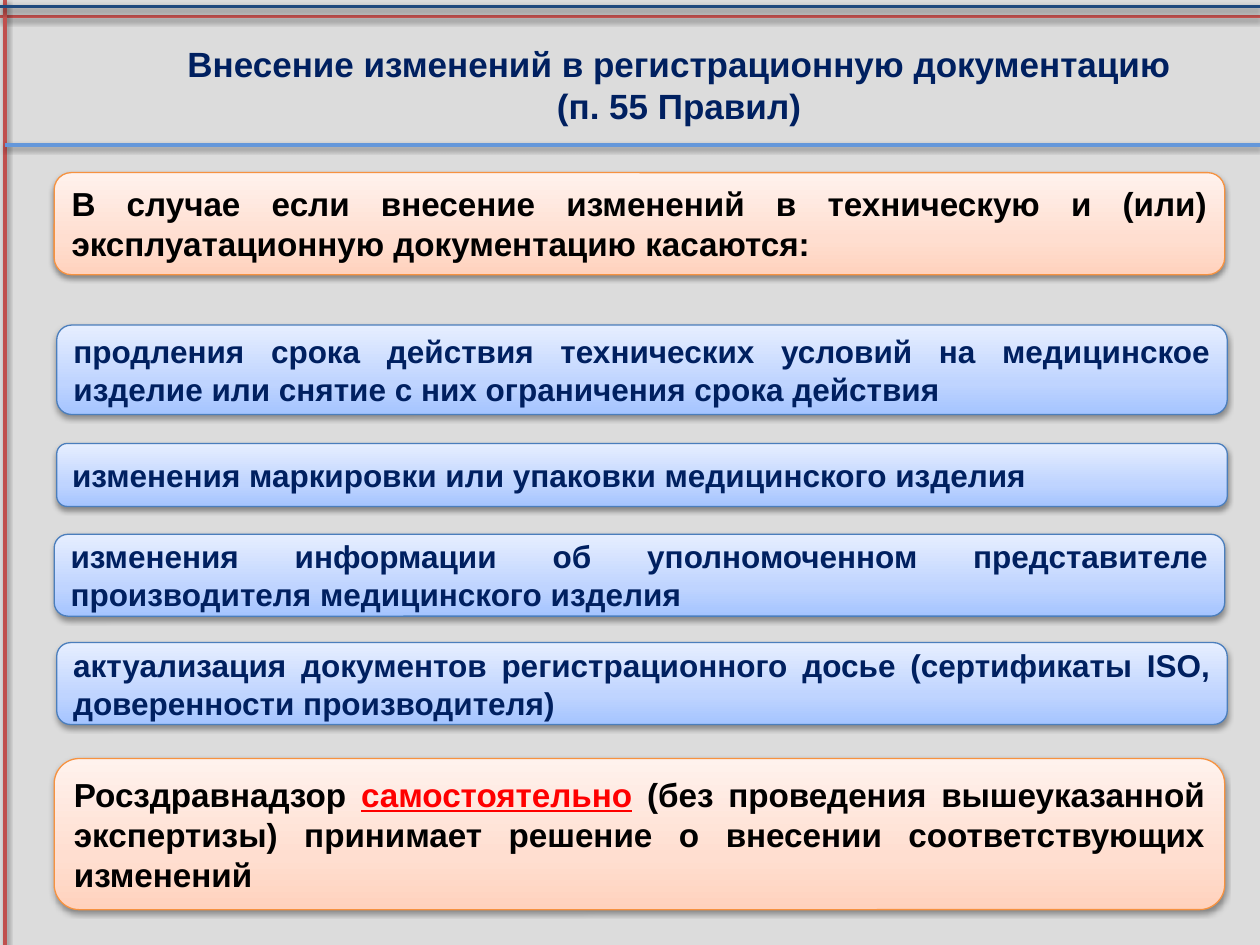
"""Build the slide on changes to medical device registration documents."""
from copy import deepcopy

from lxml import etree
from pptx import Presentation
from pptx import util as u
from pptx.dml.color import RGBColor
from pptx.enum import shapes, text
from pptx.oxml.ns import qn

COLUMNS, ROWS = 100, 75
CELL = u.Inches(0.1)
COLORS = {
    "background": "DCDCDC", "red": "C0504D", "navy": "1F497D", "sky": "6497DA",
    "ink": "002060", "black": "000000", "accent": "FF0000",
}
STYLES = {
    "orange": {"line": "F69240", "stops": ["FFD2BD", "FFDED0", "FFF2ED"],
               "size": 19, "color": "black"},
    "blue": {"line": "4B7EBC", "stops": ["A4C4FF", "BFD4FF", "E6EEFF"],
             "size": 18, "color": "ink"},
}
STOP_POSITIONS = [0, 0.35, 1]
RULES = [
    (COLUMNS, 1.3, 0, 1.3, "red"),
    (0.4, 0, 0.4, ROWS, "red"),
    (0, 0.5, COLUMNS, 0.5, "navy"),
    (0.4, 11.5, COLUMNS, 11.5, "sky"),
]
PANEL_WIDTH = 92.9
PANELS = [
    ("orange", 4.3, 13.7, 8.1,
     ["В случае если внесение изменений в техническую и (или) эксплуатационную документацию касаются:"]),
    ("blue", 4.5, 25.8, 7.1,
     ["продления срока действия технических условий на медицинское изделие или снятие с них ограничения срока действия"]),
    ("blue", 4.5, 35.2, 5,
     ["изменения маркировки или упаковки медицинского изделия"]),
    ("blue", 4.3, 42.4, 6.5,
     ["изменения информации об уполномоченном представителе производителя медицинского изделия"]),
    ("blue", 4.5, 51, 6.5,
     ["актуализация документов регистрационного досье (сертификаты ISO, доверенности производителя)"]),
    ("orange", 4.3, 60.2, 12,
     ["Росздравнадзор ", ("самостоятельно", {"color": "accent", "underline": True}),
      " (без проведения вышеуказанной экспертизы) принимает решение о внесении соответствующих изменений"]),
]


def grid(*cells):
    """Convert grid columns and rows to slide lengths."""
    return [round(cell * CELL) for cell in cells]


def rgb(value):
    """Turn a hex string into a colour."""
    return RGBColor.from_string(value)


def add_shadow(shape):
    """Give a shape or connector the soft shadow below it."""
    effects = etree.SubElement(shape._element.spPr, qn("a:effectLst"))
    shadow = etree.SubElement(effects, qn("a:outerShdw"), blurRad="40000",
                              dist="20000", dir="5400000", rotWithShape="0")
    color = etree.SubElement(shadow, qn("a:srgbClr"), val=COLORS["black"])
    etree.SubElement(color, qn("a:alpha"), val="38000")


def add_text(paragraph, content, size=18, color="ink", underline=None,
             align=text.PP_ALIGN.JUSTIFY):
    """Append one bold run to a paragraph."""
    paragraph.alignment = align
    run = paragraph.add_run()
    run.text = content
    font = run.font
    font.name, font.size, font.bold = "Arial", u.Pt(size), True
    font.underline = underline
    font.color.rgb = rgb(COLORS[color])


def add_rule(slide, left, top, right, bottom, color):
    """Draw a shadowed straight line."""
    rule = slide.shapes.add_connector(shapes.MSO_CONNECTOR.STRAIGHT,
                                      *grid(left, top, right, bottom))
    rule.line.color.rgb = rgb(COLORS[color])
    rule.line.width = u.Pt(2)
    add_shadow(rule)


def fill_gradient(shape, colors):
    """Fill a shape with a three-stop gradient rising from the bottom."""
    shape.fill.gradient()
    shape.fill.gradient_angle = 90
    stop_list = shape._element.spPr.find(f".//{qn('a:gsLst')}")
    stop_list.append(deepcopy(stop_list[0]))
    for stop, color, position in zip(shape.fill.gradient_stops, colors, STOP_POSITIONS):
        stop.color.rgb = rgb(color)
        stop.position = position


def add_panel(slide, style_name, left, top, height, runs):
    """Draw a rounded panel holding one justified paragraph."""
    style = STYLES[style_name]
    panel = slide.shapes.add_shape(shapes.MSO_SHAPE.ROUNDED_RECTANGLE,
                                   *grid(left, top, PANEL_WIDTH, height))
    fill_gradient(panel, style["stops"])
    panel.line.color.rgb = rgb(style["line"])
    panel.line.width = u.Pt(0.75)
    add_shadow(panel)
    frame = panel.text_frame
    frame.word_wrap = True
    frame.vertical_anchor = text.MSO_ANCHOR.MIDDLE
    for run in runs:
        content, extra = (run, {}) if isinstance(run, str) else run
        add_text(frame.paragraphs[0], content,
                 **{"size": style["size"], "color": style["color"], **extra})


def set_title(slide, lines):
    """Place the title placeholder and write its lines."""
    title = slide.shapes.title
    title.left, title.top, title.width, title.height = grid(7.8, 1.6, 92.2, 10.2)
    frame = title.text_frame
    frame.auto_size = text.MSO_AUTO_SIZE.NONE
    frame.vertical_anchor = text.MSO_ANCHOR.MIDDLE
    for index, line in enumerate(lines):
        paragraph = frame.add_paragraph() if index else frame.paragraphs[0]
        add_text(paragraph, line, size=20, align=text.PP_ALIGN.CENTER)


def main():
    """Assemble and save the slide."""
    presentation = Presentation()
    presentation.slide_width, presentation.slide_height = grid(COLUMNS, ROWS)
    slide = presentation.slides.add_slide(presentation.slide_layouts.get_by_name("Title Only"))
    slide.background.fill.solid()
    slide.background.fill.fore_color.rgb = rgb(COLORS["background"])
    for rule in RULES:
        add_rule(slide, *rule)
    for panel in PANELS:
        add_panel(slide, *panel)
    set_title(slide, ["Внесение изменений в регистрационную документацию", "(п. 55 Правил)"])
    presentation.save("out.pptx")


if __name__ == "__main__":
    main()
